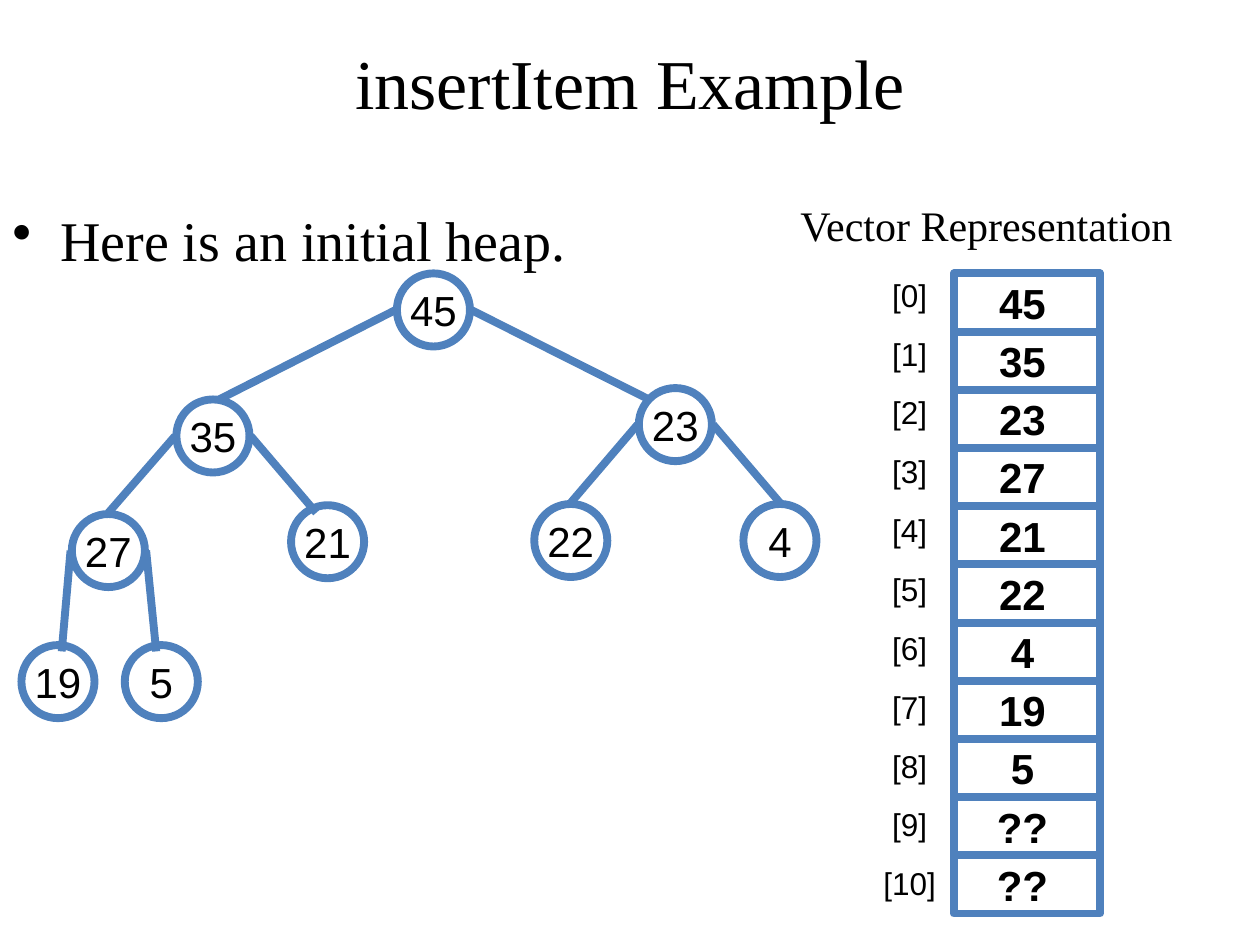
import pptx
import pptx.dml.color
import pptx.enum.shapes
import pptx.enum.text
import pptx.oxml.ns
import pptx.util
from lxml import etree
from pptx.util import Inches

SHAPE = pptx.enum.shapes.MSO_SHAPE
ALIGN = pptx.enum.text.PP_ALIGN
ANCHOR = pptx.enum.text.MSO_ANCHOR
SERIF, SANS = "Times New Roman", "Arial"

VECTOR = ["45", "35", "23", "27", "21", "22", "4", "19", "5", "??", "??"]
VECTOR_LEFT, VECTOR_TOP, VECTOR_WIDTH, VECTOR_HEIGHT = 7.57, 2.17, 1.16, 5.08
CELL_HEIGHT = VECTOR_HEIGHT / len(VECTOR)
INDEX_TOP, LAST_INDEX_TOP = 2.14, 6.81
INDEX_STEP = (LAST_INDEX_TOP - INDEX_TOP) / (len(VECTOR) - 1)

NODE_SIZE = 0.58
NODES = {  # key: left, top
    "45": (3.15, 2.17),
    "35": (1.4, 3.17),
    "23": (5.07, 3.08),
    "27": (0.57, 4.08),
    "21": (2.31, 4.01),
    "22": (4.24, 4),
    "4": (5.9, 4),
    "19": (0.17, 5.12),
    "5": (0.99, 5.12),
}
# Parent key, then where its left and right edges meet the children
BRANCHES = [
    ("45", (1.74, 3.17), (5.15, 3.17)),
    ("35", (0.86, 4.07), (2.51, 4.07)),
    ("23", (4.53, 3.99), (6.19, 3.99)),
    ("27", (0.49, 5.17), (1.24, 5.17)),
]


def colour(hex_value):
    return pptx.dml.color.RGBColor.from_string(hex_value)


def apply(target, values):
    for name, value in values.items():
        setattr(target, name, value)


class HeapSlide:
    ink = "000000"
    outline = "4F81BD"
    outline_width = 4.5

    def __init__(self, slide):
        self.slide = slide

    def fill_frame(self, frame, text, size, font=SANS, bold=False,
                   align=ALIGN.CENTER, **frame_format):
        """Put one styled paragraph into a text frame."""
        apply(frame, {"word_wrap": True, "vertical_anchor": ANCHOR.MIDDLE,
                      **frame_format})
        paragraph = frame.paragraphs[0]
        paragraph.alignment = align
        run = paragraph.add_run()
        run.text = text
        apply(run.font, {"size": pptx.util.Pt(size), "name": font, "bold": bold})
        run.font.color.rgb = colour(self.ink)
        return paragraph

    def text(self, box, text, size, **style):
        frame = self.slide.shapes.add_textbox(*map(Inches, box)).text_frame
        return self.fill_frame(frame, text, size, **style)

    def bullet(self, box, text, size, indent):
        paragraph = self.text(box, text, size, font=SERIF, align=ALIGN.LEFT,
                              vertical_anchor=ANCHOR.TOP)
        paragraph.space_before = pptx.util.Pt(size * 0.2)
        properties = paragraph._p.get_or_add_pPr()
        properties.set("marL", str(Inches(indent)))
        properties.set("indent", str(-Inches(indent)))
        mark = etree.SubElement(properties, pptx.oxml.ns.qn("a:buChar"))
        mark.set("char", "•")

    def stroke(self, line):
        line.color.rgb = colour(self.outline)
        line.width = pptx.util.Pt(self.outline_width)

    def outlined(self, kind, box, text, bold=False, margin_right=0):
        """Add an unfilled shape with its value inside."""
        shape = self.slide.shapes.add_shape(kind, *map(Inches, box))
        shape.shadow.inherit = False
        shape.fill.background()
        self.stroke(shape.line)
        self.fill_frame(shape.text_frame, text, 24, bold=bold, word_wrap=False,
                        margin_left=0, margin_top=0, margin_bottom=0,
                        margin_right=Inches(margin_right))

    def edge(self, start, end):
        connector = self.slide.shapes.add_connector(
            pptx.enum.shapes.MSO_CONNECTOR.STRAIGHT,
            *map(Inches, (*start, *end)))
        self.stroke(connector.line)
        etree.SubElement(connector._element.spPr,
                         pptx.oxml.ns.qn("a:effectLst"))


def draw_vector(page):
    page.text((6.08, 1.53, 3.5, 0.5), "Vector Representation", 24, font=SERIF)
    for index, value in enumerate(VECTOR):
        top = VECTOR_TOP + index * CELL_HEIGHT
        page.outlined(SHAPE.RECTANGLE,
                      (VECTOR_LEFT, top, VECTOR_WIDTH, CELL_HEIGHT),
                      value, bold=True, margin_right=0.07)
        page.text((6.91, INDEX_TOP + index * INDEX_STEP, 0.62, 0.4),
                  f"[{index}]", 18, word_wrap=False, vertical_anchor=ANCHOR.TOP)


def draw_heap(page):
    for key, (left, top) in NODES.items():
        page.outlined(SHAPE.OVAL, (left, top, NODE_SIZE, NODE_SIZE), key)
    for parent, left_child, right_child in BRANCHES:
        left, top = NODES[parent]
        middle = top + NODE_SIZE / 2
        page.edge((left - 0.01, middle), left_child)
        page.edge((left + NODE_SIZE + 0.01, middle), right_child)


def main():
    deck = pptx.Presentation()
    apply(deck, {"slide_width": Inches(10), "slide_height": Inches(7.5)})
    page = HeapSlide(deck.slides.add_slide(deck.slide_layouts[6]))
    page.text((0.5, 0.3, 9, 0.7), "insertItem Example", 40, font=SERIF)
    page.bullet((0, 1.58, 9.83, 5.42), "Here is an initial heap.", 32, 0.38)
    draw_vector(page)
    draw_heap(page)
    deck.save("out.pptx")


if __name__ == "__main__":
    main()
